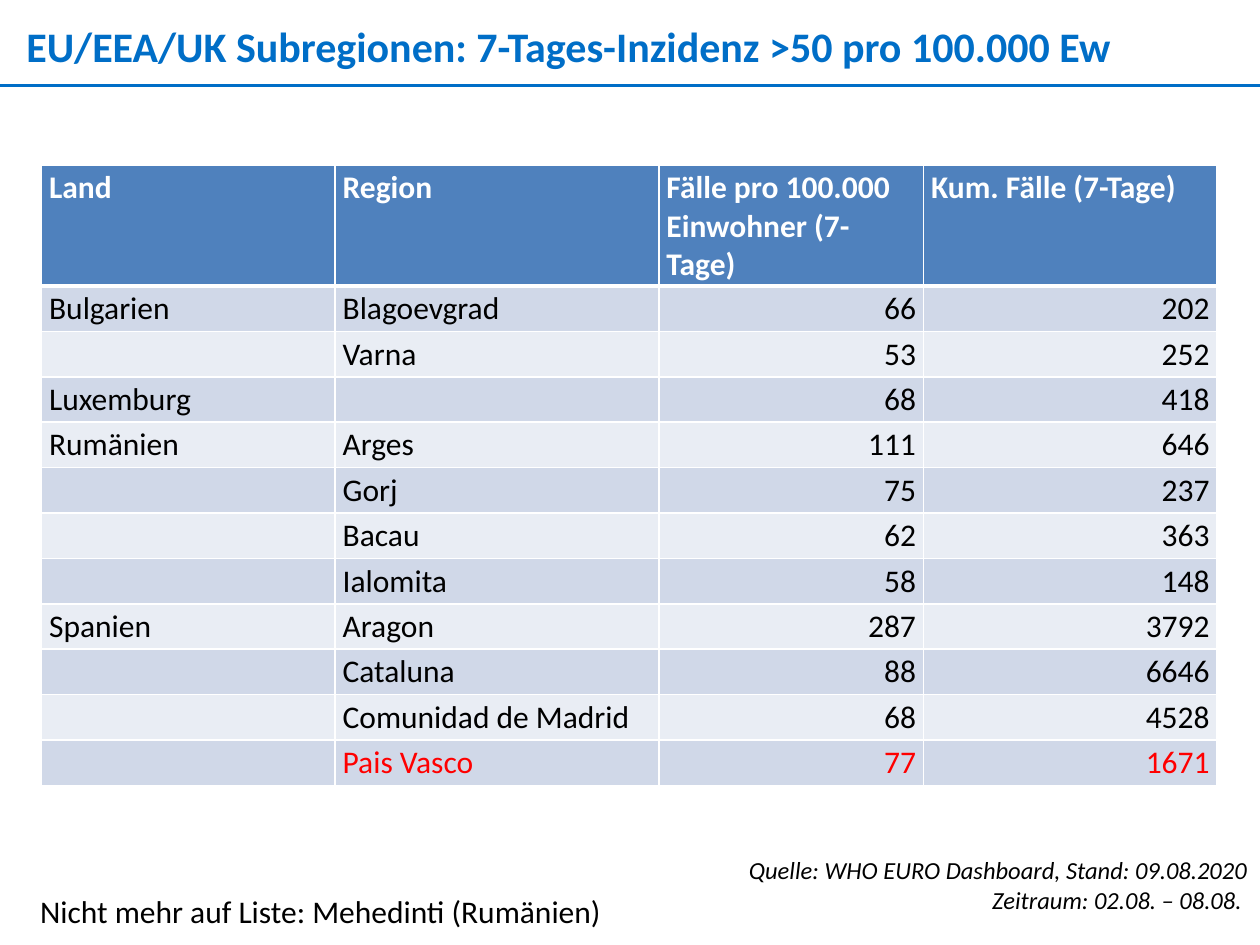
from dataclasses import dataclass

from lxml.etree import SubElement
from pptx import Presentation
from pptx.dml.color import RGBColor
from pptx.enum.shapes import MSO_CONNECTOR
from pptx.enum.text import MSO_ANCHOR, PP_ALIGN
from pptx.oxml.ns import qn
from pptx.util import Inches, Pt


@dataclass(frozen=True)
class Theme:
    font: str = "Calibri"
    accent: str = "006EC7"
    header: str = "4F81BD"
    bands: tuple = ("D0D8E8", "E9EDF4")
    white: str = "FFFFFF"
    text: str = "000000"
    highlight: str = "FF0000"
    title_size: int = 24
    body_size: int = 18
    source_size: int = 14


THEME = Theme()

HEADINGS = ("Land", "Region", "Fälle pro 100.000 Einwohner (7-Tage)", "Kum. Fälle (7-Tage)")
REGIONS = (
    ("Bulgarien", "Blagoevgrad", 66, 202),
    ("", "Varna", 53, 252),
    ("Luxemburg", "", 68, 418),
    ("Rumänien", "Arges", 111, 646),
    ("", "Gorj", 75, 237),
    ("", "Bacau", 62, 363),
    ("", "Ialomita", 58, 148),
    ("Spanien", "Aragon", 287, 3792),
    ("", "Cataluna", 88, 6646),
    ("", "Comunidad de Madrid", 68, 4528),
    ("", "Pais Vasco", 77, 1671),
)
NEW_REGIONS = {"Pais Vasco"}
COLUMN_WIDTHS = (2.33, 2.57, 2.1, 2.33)
HEADER_HEIGHT = 0.94


def write_text(frame, text, size=THEME.body_size, color=THEME.text,
               bold=False, italic=False, align=PP_ALIGN.LEFT):
    """Write one paragraph for each line of text."""
    frame.word_wrap = True
    for index, line in enumerate(text.split("\n")):
        paragraph = frame.add_paragraph() if index else frame.paragraphs[0]
        paragraph.alignment = align
        paragraph.font.size = Pt(size)
        if not line:
            continue
        run = paragraph.add_run()
        run.text = line
        run.font.name = THEME.font
        run.font.size = Pt(size)
        run.font.bold = bold
        run.font.italic = italic
        run.font.color.rgb = RGBColor.from_string(color)


def add_text(slide, box, text, margin=None, **text_format):
    frame = slide.shapes.add_textbox(*map(Inches, box)).text_frame
    if margin is not None:
        frame.margin_left = frame.margin_right = Inches(margin)
        frame.margin_top = frame.margin_bottom = Inches(margin)
    write_text(frame, text, **text_format)


def add_heading(slide, box):
    left, top, width, height = box
    add_text(slide, (left + 0.21, top + 0.16, width - 0.37, 0.4),
             "EU/EEA/UK Subregionen: 7-Tages-Inzidenz >50 pro 100.000 Ew",
             margin=0, size=THEME.title_size, color=THEME.accent, bold=True)
    # Rule along the bottom of the heading
    rule = slide.shapes.add_connector(
        MSO_CONNECTOR.STRAIGHT, Inches(left), Inches(top + height),
        Inches(left + width), Inches(top + height))
    rule.line.color.rgb = RGBColor.from_string(THEME.accent)
    rule.line.width = Pt(1.5)
    SubElement(rule._element.spPr, qn("a:effectLst"))


def set_borders(cell, top=1, bottom=1):
    properties = cell._tc.get_or_add_tcPr()
    for side, points in (("L", 1), ("R", 1), ("T", top), ("B", bottom)):
        border = SubElement(properties, qn(f"a:ln{side}"), w=str(Pt(points)))
        fill = SubElement(border, qn("a:solidFill"))
        SubElement(fill, qn("a:srgbClr"), val=THEME.white)


def fill_cell(cell, text, fill, top=1, bottom=1, **text_format):
    cell.margin_left = cell.margin_right = Inches(0.06)
    cell.margin_top = cell.margin_bottom = Inches(0.03)
    cell.vertical_anchor = MSO_ANCHOR.TOP
    set_borders(cell, top, bottom)
    cell.fill.solid()
    cell.fill.fore_color.rgb = RGBColor.from_string(fill)
    write_text(cell.text_frame, text, **text_format)


def add_incidence_table(slide, box):
    height = box[3]
    table = slide.shapes.add_table(
        len(REGIONS) + 1, len(HEADINGS), *map(Inches, box)).table
    table.horz_banding = False
    for column, width in zip(table.columns, COLUMN_WIDTHS):
        column.width = Inches(width)
    row_height = (height - HEADER_HEIGHT) / len(REGIONS)
    for index, row in enumerate(table.rows):
        row.height = Inches(row_height if index else HEADER_HEIGHT)

    # Header row
    for column, heading in enumerate(HEADINGS):
        fill_cell(table.cell(0, column), heading, THEME.header, bottom=3,
                  color=THEME.white, bold=True)

    # Banded rows, numbers to the right
    for row, values in enumerate(REGIONS, start=1):
        color = THEME.highlight if values[1] in NEW_REGIONS else THEME.text
        for column, value in enumerate(values):
            align = PP_ALIGN.RIGHT if isinstance(value, int) else PP_ALIGN.LEFT
            fill_cell(table.cell(row, column), str(value), THEME.bands[(row - 1) % 2],
                      top=3 if row == 1 else 1, color=color, align=align)


def add_footer(slide, box):
    left, top, width, height = box
    # Source and period
    add_text(slide, (left + 1.83, top, width - 1.83, 0.57),
             "Quelle: WHO EURO Dashboard, Stand: 09.08.2020\nZeitraum: 02.08. – 08.08. ",
             size=THEME.source_size, italic=True, align=PP_ALIGN.RIGHT)
    # Regions taken off the list
    add_text(slide, (left + 0.22, top + height - 0.4, 6.61, 0.4),
             "Nicht mehr auf Liste: Mehedinti (Rumänien)")


def main():
    presentation = Presentation()
    presentation.slide_width = Inches(10)
    presentation.slide_height = Inches(7.5)
    slide = presentation.slides.add_slide(presentation.slide_layouts[6])
    add_heading(slide, (0, 0, 10, 0.68))
    add_incidence_table(slide, (0.33, 1.31, 9.33, 4.9))
    add_footer(slide, (0, 6.74, 10, 0.69))
    presentation.save("out.pptx")


if __name__ == "__main__":
    main()
